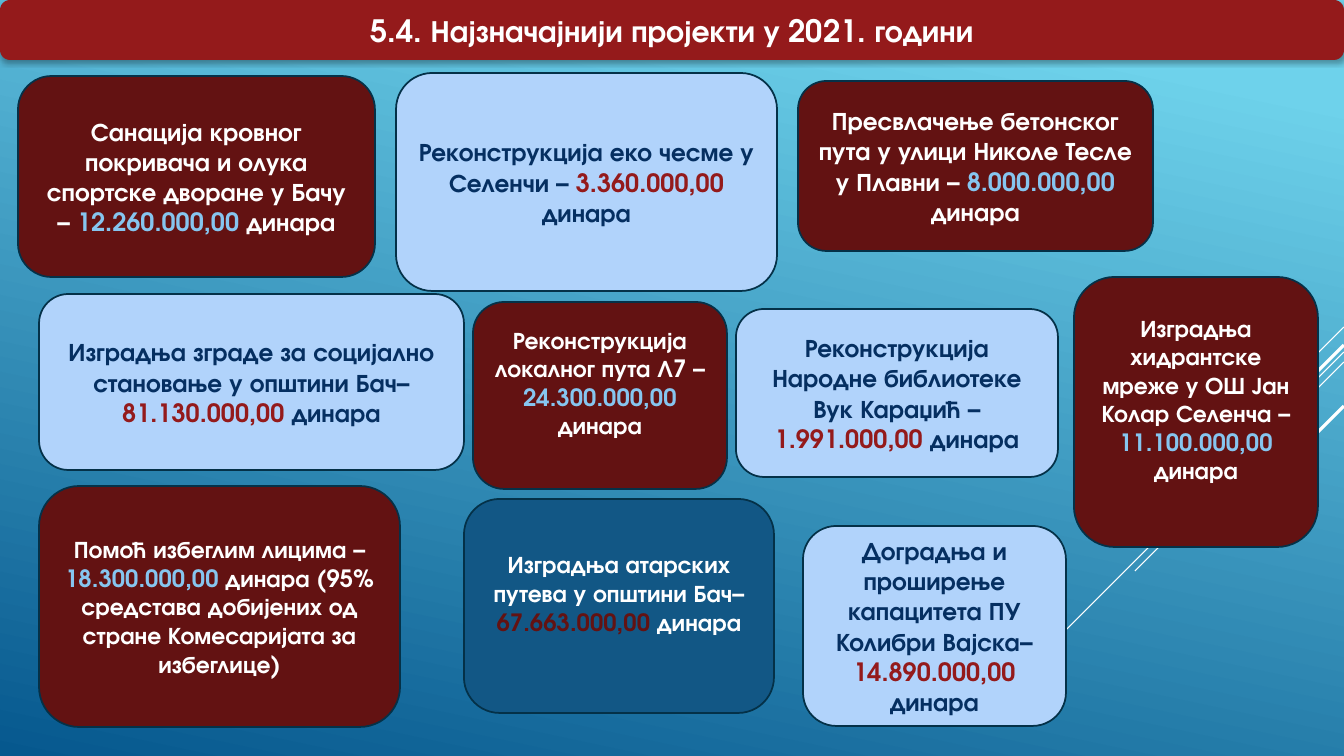
"""Build the slide of the most important projects in 2021."""
from lxml.etree import SubElement
from pptx import Presentation
from pptx.dml.color import RGBColor
from pptx.enum.shapes import MSO_CONNECTOR, MSO_SHAPE
from pptx.enum.text import MSO_ANCHOR, PP_ALIGN
from pptx.oxml.ns import qn
from pptx.util import Pt

WIDTH, HEIGHT = 1344, 756
SCALE = 12192000 / WIDTH
FONT = "TeX Gyre Adventor"
COLORS = {
    "sky": "6ED2EB", "sea": "06588E", "white": "FFFFFF", "red": "941A1B",
    "maroon": "631212", "pale": "B1D3FB", "blue": "125785",
    "navy": "052F61", "light": "86C5EF", "outline": "043148",
}
STYLES = {
    "dark": ("maroon", "white", "light"),
    "pale": ("pale", "navy", "red"),
    "blue": ("blue", "white", "maroon"),
}
RAYS = [(327, 101, 0.75), (352, 329, 0.75), (362, 209, 0.75),
        (345, 193, 2.25), (406, 140, 2.25)]
PROJECTS = [
    ("dark", (18, 76, 357, 201), 18, 0,
     "Санација кровног покривача и олука спортске дворане у Бачу – ",
     "12.260.000,00 ", "динара"),
    ("pale", (396, 73, 381, 218), 18, 0,
     "Реконструкција еко чесме у Селенчи – ", "3.360.000,00 ", "динара"),
    ("dark", (39, 486, 361, 241), 17, 0,
     "Помоћ избеглим лицима – ", "18.300.000,00 ",
     "динара (95% средстава добијених од стране Комесаријата за избеглице)"),
    ("pale", (39, 294, 425, 176), 18, 0,
     "Изградња зграде за социјално становање у општини Бач– ",
     "81.130.000,00 ", "динара"),
    ("dark", (798, 81, 355, 170), 18, 0,
     "Пресвлачење бетонског пута у улици Николе Тесле у Плавни – ",
     "8.000.000,00 ", "динара"),
    ("dark", (473, 302, 254, 187), 17, 26,
     "Реконструкција локалног пута Л7 – ", "24.300.000,00 ", "динара"),
    ("pale", (736, 309, 322, 168), 18, 0,
     "Реконструкција Народне библиотеке Вук Караџић – ",
     "1.991.000,00 ", "динара"),
    ("blue", (464, 499, 310, 214), 17, 26,
     "Изградња атарских путева у општини Бач– ", "67.663.000,00 ", "динара"),
    ("pale", (803, 526, 263, 200), 18, 0,
     "Доградња и проширење капацитета ПУ Колибри Вајска– ",
     "14.890.000,00 ", "динара"),
    ("dark", (1074, 277, 244, 270), 17, 26,
     "Изградња хидрантске мреже у ОШ Јан Колар Селенча – ",
     "11.100.000,00 ", "динара"),
]


def px(length):
    """Turn pixels into EMU."""
    return round(length * SCALE)


def color(name):
    """Return the named colour."""
    return RGBColor.from_string(COLORS[name])


def paint_background(slide):
    """Fill the background with a slanted gradient."""
    fill = slide.background.fill
    fill.gradient()
    fill.gradient_angle = 258
    for stop, name, position in zip(fill.gradient_stops, ("sky", "sea"), (0.1, 1)):
        stop.color.rgb = color(name)
        stop.position = position


def add_ray(slide, top, reach, weight):
    """Draw a diagonal line down from the right edge."""
    ray = slide.shapes.add_connector(
        MSO_CONNECTOR.STRAIGHT, px(WIDTH), px(top), px(WIDTH - reach), px(top + reach))
    ray.line.color.rgb = color("white")
    ray.line.width = Pt(weight)
    SubElement(ray._element.spPr, qn("a:effectLst"))


def add_box(slide, bounds, fill, runs, size):
    """Add a rounded box holding one centred paragraph of coloured runs."""
    shape = slide.shapes.add_shape(MSO_SHAPE.ROUNDED_RECTANGLE, *map(px, bounds))
    shape.shadow.inherit = False
    shape.fill.solid()
    shape.fill.fore_color.rgb = color(fill)
    shape.line.fill.background()
    shape.text_frame.word_wrap = True
    shape.text_frame.vertical_anchor = MSO_ANCHOR.MIDDLE
    paragraph = shape.text_frame.paragraphs[0]
    paragraph.alignment = PP_ALIGN.CENTER
    for text, name in runs:
        run = paragraph.add_run()
        run.text = text
        run.font.name = FONT
        run.font.size = Pt(size)
        run.font.bold = True
        run.font.color.rgb = color(name)
    return shape


def add_title(slide, text):
    """Add the title bar with its soft shadow."""
    shape = add_box(slide, (0, 0, WIDTH, 60), "red", [(text, "white")], 22)
    effects = shape._element.spPr.find(qn("a:effectLst"))
    shadow = SubElement(effects, qn("a:outerShdw"), blurRad=str(Pt(3.5)),
                        dist=str(Pt(2.2)), dir="5400000", rotWithShape="0")
    black = SubElement(shadow, qn("a:srgbClr"), val="000000")
    SubElement(black, qn("a:alpha"), val="32000")


def add_project(slide, style, bounds, size, lift, name, amount, ending):
    """Add an outlined project box with its amount highlighted."""
    fill, ink, accent = STYLES[style]
    runs = [(name, ink), (amount, accent), (ending, ink)]
    shape = add_box(slide, bounds, fill, runs, size)
    shape.line.color.rgb = color("outline")
    shape.line.width = Pt(1.25)
    shape.text_frame.margin_bottom = px(5 + lift)


def main():
    """Build and save the presentation."""
    presentation = Presentation()
    presentation.slide_width, presentation.slide_height = px(WIDTH), px(HEIGHT)
    slide = presentation.slides.add_slide(presentation.slide_layouts[6])
    paint_background(slide)
    for ray in RAYS:
        add_ray(slide, *ray)
    add_title(slide, "5.4. Најзначајнији пројекти у 2021. години")
    for project in PROJECTS:
        add_project(slide, *project)
    presentation.save("out.pptx")


if __name__ == "__main__":
    main()
